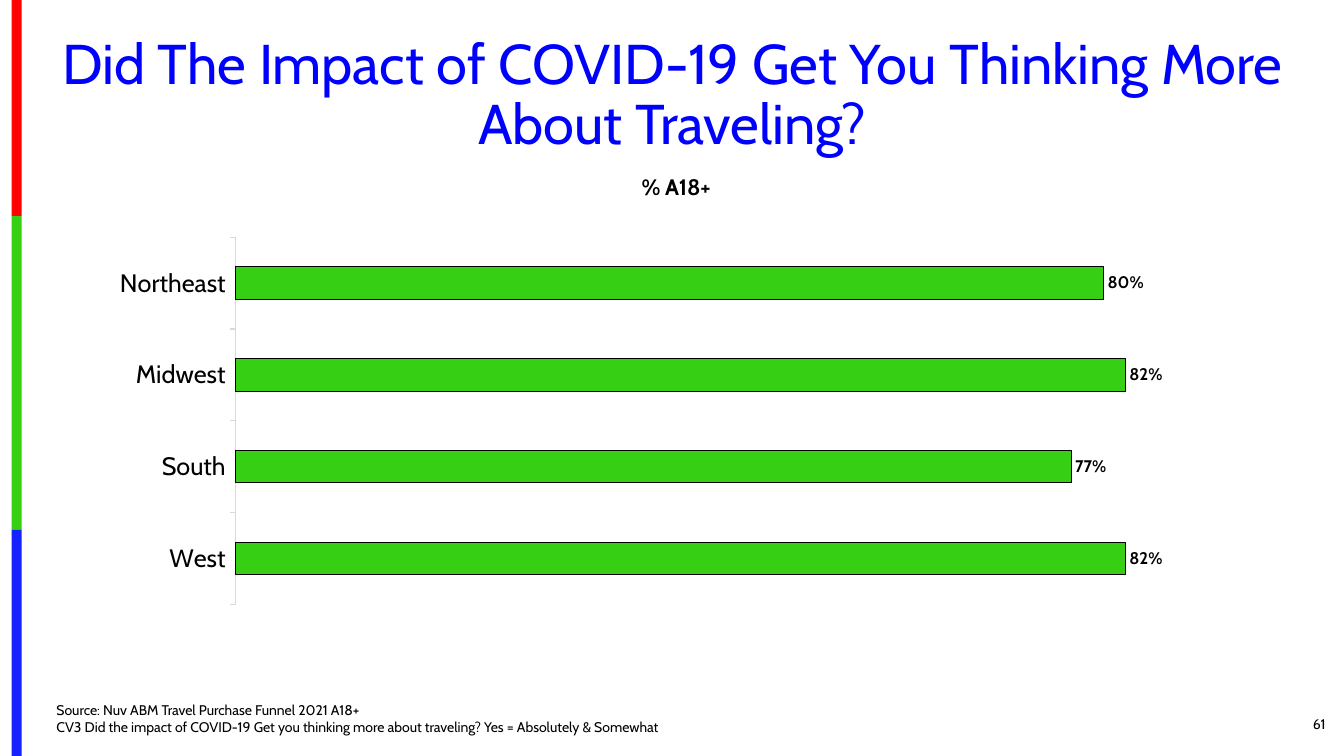
from lxml import etree
from pptx import Presentation
from pptx.chart.data import CategoryChartData
from pptx.dml.color import RGBColor
from pptx.enum.chart import XL_CHART_TYPE, XL_LABEL_POSITION, XL_LEGEND_POSITION, XL_TICK_MARK
from pptx.enum.shapes import MSO_SHAPE
from pptx.enum.text import MSO_ANCHOR, MSO_AUTO_SIZE, PP_ALIGN
from pptx.oxml.ns import qn
from pptx.util import Pt

BAR_CLUSTERED = XL_CHART_TYPE.BAR_CLUSTERED
OUTSIDE_END = XL_LABEL_POSITION.OUTSIDE_END
LEGEND_TOP = XL_LEGEND_POSITION.TOP
TICK_OUTSIDE = XL_TICK_MARK.OUTSIDE
TICK_NONE = XL_TICK_MARK.NONE
RECTANGLE = MSO_SHAPE.RECTANGLE
MIDDLE = MSO_ANCHOR.MIDDLE
NO_AUTOFIT = MSO_AUTO_SIZE.NONE
CENTER = PP_ALIGN.CENTER
RIGHT = PP_ALIGN.RIGHT

FONT = "Cabin"
BLACK = RGBColor(0x00, 0x00, 0x00)
LABEL_GRAY = RGBColor(0x40, 0x40, 0x40)
TITLE_BLUE = RGBColor(0x00, 0x00, 0xFF)
STRIPE_RED = RGBColor(0xFE, 0x00, 0x00)
STRIPE_GREEN = RGBColor(0x36, 0xCF, 0x12)
STRIPE_BLUE = RGBColor(0x13, 0x22, 0xFE)
BAR_BLUE = RGBColor(0x33, 0x33, 0xFF)
BAR_GREEN = RGBColor(0x36, 0xCF, 0x13)
AXIS_GRAY = RGBColor(0xD9, 0xD9, 0xD9)


def format_font(font, size, color=BLACK, bold=False):
    font.name = FONT
    font.size = Pt(size)
    font.bold = bold
    font.color.rgb = color


def place(shape, box):
    shape.left, shape.top, shape.width, shape.height = map(Pt, box)


def format_text(shape, text, size, color=BLACK):
    frame = shape.text_frame
    frame.text = text
    frame.word_wrap = True
    frame.auto_size = NO_AUTOFIT
    paragraph = frame.paragraphs[0]
    for run in paragraph.runs:
        format_font(run.font, size, color)
    return paragraph


def add_stripe(slide, box):
    left, top, width, height = box
    for percent, color in ((28.6, STRIPE_RED), (41.5, STRIPE_GREEN), (29.9, STRIPE_BLUE)):
        part_height = percent / 100 * height
        band = slide.shapes.add_shape(RECTANGLE, Pt(left), Pt(top), Pt(width), Pt(part_height))
        band.shadow.inherit = False
        band.fill.solid()
        band.fill.fore_color.rgb = color
        band.line.fill.background()
        top += part_height


def add_title(slide, box):
    title = slide.shapes.title
    place(title, box)
    paragraph = format_text(
        title, "Did The Impact of COVID-19 Get You Thinking More About Traveling?", 40, TITLE_BLUE)
    title.text_frame.vertical_anchor = MIDDLE
    paragraph.alignment = CENTER
    paragraph.line_spacing = 0.9


def set_layout(element, chart_box, position, following, inner=False):
    for existing in element.findall(qn("c:layout")):
        element.remove(existing)
    layout = etree.Element(qn("c:layout"))
    manual = etree.SubElement(layout, qn("c:manualLayout"))
    settings = [("layoutTarget", "inner")] if inner else []
    settings += [("xMode", "edge"), ("yMode", "edge")]
    extents = chart_box[2:] * 2
    settings += [(name, length / extent) for name, length, extent in zip("xywh", position, extents)]
    for name, value in settings:
        etree.SubElement(manual, qn("c:" + name)).set("val", str(value))
    element.find(qn(following)).addprevious(layout)


def hide_legend_entry(legend, index):
    entry = etree.Element(qn("c:legendEntry"))
    etree.SubElement(entry, qn("c:idx")).set("val", str(index))
    etree.SubElement(entry, qn("c:delete")).set("val", "1")
    legend._element.find(qn("c:legendPos")).addnext(entry)


def format_series(series, color, label_color):
    series.format.fill.solid()
    series.format.fill.fore_color.rgb = color
    labels = series.data_labels
    labels.show_value = True
    labels.number_format = "0%"
    labels.number_format_is_linked = False
    labels.position = OUTSIDE_END
    format_font(labels.font, 12, label_color, bold=True)


def add_region_chart(slide, box):
    data = CategoryChartData(number_format="0%")
    data.categories = ["West", "South", "Midwest", "Northeast"]
    data.add_series("No", ())
    data.add_series("Yes", (0.82, 0.77, 0.82, 0.8))
    chart = slide.shapes.add_chart(BAR_CLUSTERED, *map(Pt, box), data).chart
    format_font(chart.font, 10)

    chart.has_title = True
    title_frame = chart.chart_title.text_frame
    title_frame.text = "% A18+"
    format_font(title_frame.paragraphs[0].runs[0].font, 16, bold=True)
    chart.chart_title.include_in_layout = False
    set_layout(chart.chart_title._element, box, (385.6, 21.2), "c:overlay")

    chart.has_legend = True
    chart.legend.position = LEGEND_TOP
    chart.legend.include_in_layout = False
    format_font(chart.legend.font, 14)
    set_layout(chart.legend._element, box, (389.2, 54.5, 42.2, 21.8), "c:overlay")
    hide_legend_entry(chart.legend, 0)

    category_axis = chart.category_axis
    category_axis.major_tick_mark = TICK_OUTSIDE
    category_axis.minor_tick_mark = TICK_NONE
    category_axis.format.line.color.rgb = AXIS_GRAY
    category_axis.format.line.width = Pt(0.75)
    format_font(category_axis.tick_labels.font, 18)

    value_axis = chart.value_axis
    value_axis.visible = False
    value_axis.has_major_gridlines = False
    value_axis.minimum_scale = 0
    value_axis.maximum_scale = 0.9

    plot = chart.plots[0]
    plot.gap_width = 182
    plot.overlap = 100
    plot.vary_by_categories = False
    set_layout(plot._element.getparent(), box, (98.5, 70.9, 697.6, 262.2), "c:barChart", inner=True)
    no_series, yes_series = plot.series
    format_series(no_series, BAR_BLUE, LABEL_GRAY)
    format_series(yes_series, BAR_GREEN, BLACK)
    yes_series.format.line.color.rgb = BLACK
    yes_series.format.line.width = Pt(0.75)


def add_source_note(slide, box):
    note = slide.placeholders[1]
    place(note, box)
    paragraph = format_text(
        note,
        "Source: Nuv ABM Travel Purchase Funnel 2021 A18+\v"
        "CV3 Did the impact of COVID-19 Get you thinking more about traveling? "
        "Yes = Absolutely & Somewhat", 10)
    paragraph.space_before = Pt(0)
    properties = paragraph._p.get_or_add_pPr()
    properties.set("marL", "0")
    properties.set("indent", "0")
    etree.SubElement(properties, qn("a:buNone"))


def add_page_number(slide, box):
    number = slide.shapes.add_textbox(*map(Pt, box))
    paragraph = format_text(number, "61", 10)
    number.text_frame.vertical_anchor = MIDDLE
    paragraph.alignment = RIGHT


def main():
    presentation = Presentation()
    presentation.slide_width = Pt(960)
    presentation.slide_height = Pt(540)
    slide = presentation.slides.add_slide(presentation.slide_layouts[1])
    add_stripe(slide, (8.3, 0, 7.2, 540))
    add_title(slide, (33.1, 21.6, 894.2, 94.3))
    add_region_chart(slide, (69.8, 98.6, 844.6, 363.6))
    add_source_note(slide, (33.1, 497.5, 680.4, 31.7))
    add_page_number(slide, (876.2, 502.6, 77.8, 28.8))
    presentation.save("out.pptx")


if __name__ == "__main__":
    main()
